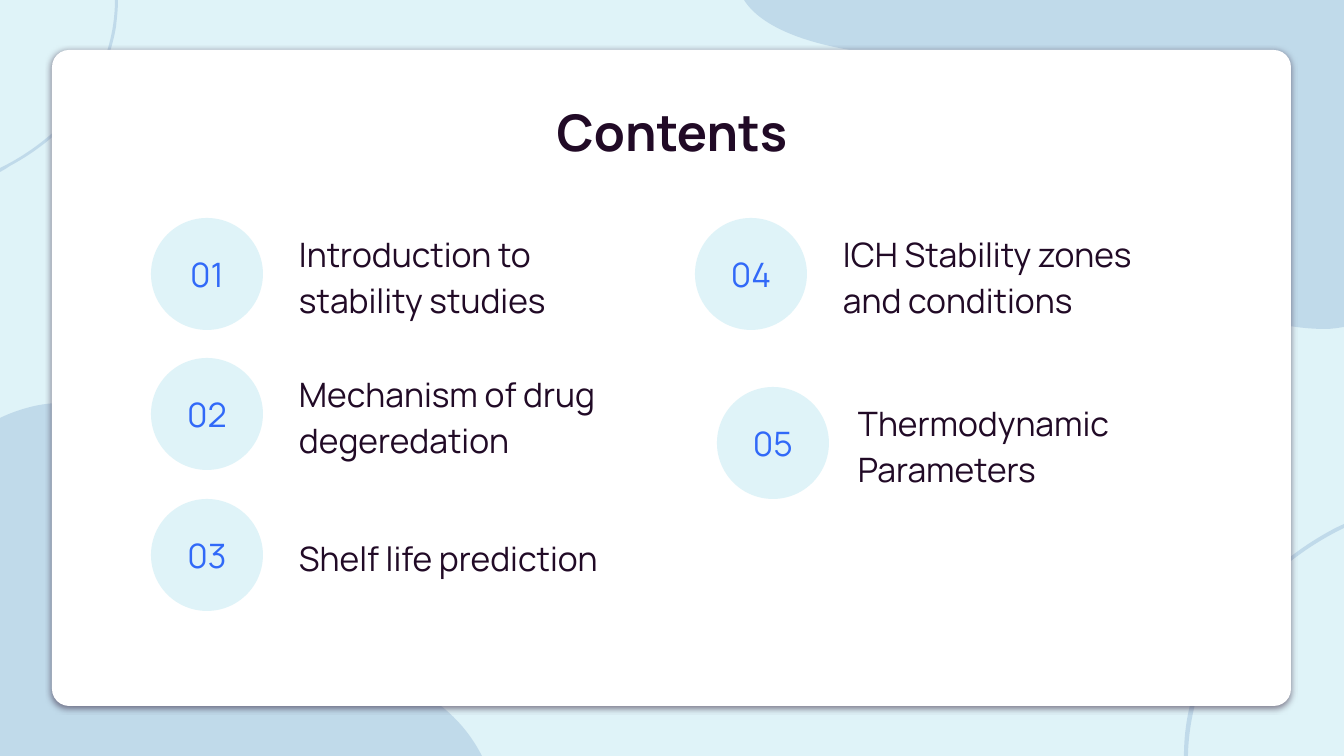
from dataclasses import dataclass

from lxml import etree
from pptx import Presentation
from pptx import util as u
from pptx.dml import color
from pptx.enum import shapes, text
from pptx.oxml import ns

PX = 914400 / 100.8  # EMU in one px
WIDTH, HEIGHT = 1344, 756


@dataclass(frozen=True)
class Theme:
    font: str = "Manrope"
    pale: str = "DFF3F8"
    wave: str = "A0BFDB"
    wave_alpha: int = 48
    card: str = "FFFFFF"
    ink: str = "210A26"
    number: str = "3169F8"
    title_size: int = 36
    item_size: int = 24
    spacing: float = 1.15
    inset: int = 13


def emu(px):
    return u.Emu(round(px * PX))


def rgb(value):
    return color.RGBColor.from_string(value)


def write(shape, content, *, theme, size, ink, bold=False, spacing=None,
          align=text.PP_ALIGN.LEFT, anchor=text.MSO_ANCHOR.MIDDLE):
    frame = shape.text_frame
    frame.word_wrap = True
    frame.auto_size = text.MSO_AUTO_SIZE.NONE
    frame.vertical_anchor = anchor
    frame.margin_left = frame.margin_right = emu(theme.inset)
    frame.margin_top = frame.margin_bottom = emu(theme.inset)
    frame.text = content
    paragraph = frame.paragraphs[0]
    paragraph.alignment = align
    paragraph.space_before = u.Pt(0)
    if spacing:
        paragraph.line_spacing = spacing
    font = paragraph.runs[0].font
    font.name, font.size, font.bold = theme.font, u.Pt(size), bold
    font.color.rgb = rgb(ink)


class Deck:
    def __init__(self, theme):
        self.theme = theme
        self.presentation = Presentation()
        self.presentation.slide_width = emu(WIDTH)
        self.presentation.slide_height = emu(HEIGHT)
        layout = self.presentation.slide_layouts.get_by_name("Title Only")
        self.slide = self.presentation.slides.add_slide(layout)
        background = self.slide.background.fill
        background.solid()
        background.fore_color.rgb = rgb(theme.pale)

    def paint(self, shape, fill):
        shape.shadow.inherit = False
        shape.fill.solid()
        shape.fill.fore_color.rgb = rgb(fill)
        shape.line.fill.background()

    def wave(self, start, segments):
        """Segments hold two numbers for a line and six for a curve."""
        builder = self.slide.shapes.build_freeform(*map(emu, start), scale=1.0)
        ends = [tuple(map(emu, segment[-2:])) for segment in segments]
        builder.add_line_segments(ends, close=True)
        shape = builder.convert_to_shape()
        self.paint(shape, self.theme.wave)
        tint = shape.element.spPr.find(".//" + ns.qn("a:srgbClr"))
        etree.SubElement(tint, ns.qn("a:alpha"), val=str(self.theme.wave_alpha * 1000))
        # Bend the straight segments that have handles
        lines = shape.element.spPr.findall(".//" + ns.qn("a:lnTo"))
        for line, segment in zip(lines, segments):
            if len(segment) == 6:
                curve = etree.Element(ns.qn("a:cubicBezTo"))
                for x, y in zip(segment[::2], segment[1::2]):
                    etree.SubElement(curve, ns.qn("a:pt"), x=str(emu(x) - shape.left),
                                     y=str(emu(y) - shape.top))
                line.getparent().replace(line, curve)

    def card(self, left, top, width, height):
        shape = self.slide.shapes.add_shape(
            shapes.MSO_SHAPE.ROUNDED_RECTANGLE, *map(emu, (left, top, width, height)))
        shape.adjustments[0] = 0.026
        self.paint(shape, self.theme.card)
        effects = shape.element.spPr.find(ns.qn("a:effectLst"))
        shadow = etree.SubElement(
            effects, ns.qn("a:outerShdw"), blurRad=str(u.Pt(4.5)),
            dist=str(u.Pt(1.5)), dir="5400000", algn="bl", rotWithShape="0")
        tint = etree.SubElement(shadow, ns.qn("a:srgbClr"), val=self.theme.ink)
        etree.SubElement(tint, ns.qn("a:alpha"), val="50000")

    def title(self, content, left, top, width, height):
        shape = self.slide.shapes.title
        shape.left, shape.top, shape.width, shape.height = map(
            emu, (left, top, width, height))
        # Bring the title in front of the card
        shape.element.getparent().append(shape.element)
        write(shape, content, theme=self.theme, size=self.theme.title_size,
              ink=self.theme.ink, bold=True, spacing=self.theme.spacing,
              align=text.PP_ALIGN.CENTER, anchor=text.MSO_ANCHOR.TOP)

    def circle(self, content, left, top, size):
        shape = self.slide.shapes.add_shape(
            shapes.MSO_SHAPE.OVAL, *map(emu, (left, top, size, size)))
        self.paint(shape, self.theme.pale)
        write(shape, content, theme=self.theme, size=self.theme.item_size,
              ink=self.theme.number, align=text.PP_ALIGN.CENTER)

    def label(self, content, left, top, width, height):
        shape = self.slide.shapes.add_textbox(*map(emu, (left, top, width, height)))
        write(shape, content, theme=self.theme, size=self.theme.item_size,
              ink=self.theme.ink, spacing=self.theme.spacing)


WAVES = [
    # Thin arc, bottom right
    ((1188, 756), [(1189, 708, 1206, 658, 1235, 619), (1263, 580, 1301, 549, 1344, 528),
                   (1344, 524), (1340, 526, 1335, 528, 1330, 531),
                   (1295, 550, 1263, 577, 1238, 608), (1213, 641, 1194, 679, 1187, 720),
                   (1185, 732, 1184, 744, 1184, 756)]),
    # Blob, bottom left
    ((60, 403), [(29, 403, 0, 418, 0, 418), (0, 756), (482, 756),
                 (420, 634, 230, 657, 150, 633), (72, 610, 158, 493, 116, 430),
                 (101, 409, 81, 403, 60, 403)]),
    # Blob, top right
    ((744, 0), [(766, 35, 839, 58, 957, 58), (961, 58, 966, 58, 970, 58),
                (972, 58, 973, 58, 975, 58),
                (1151, 58, 1078, 215, 1209, 296), (1244, 319, 1289, 329, 1325, 329),
                (1332, 329, 1338, 328, 1344, 327), (1344, 0)]),
    # Thin arc, top left
    ((115, 0), [(115, 36, 103, 73, 82, 102), (60, 130, 31, 153, 0, 168), (0, 172),
                (4, 170, 7, 168, 10, 166), (36, 152, 60, 133, 79, 110),
                (98, 86, 111, 57, 116, 27), (117, 18, 118, 9, 118, 0)]),
]

CIRCLE, LABEL_WIDTH = 112, 364
LEFT, RIGHT, TOP, TWO_ROWS = 151, 695, 218, 281

# Wording, circle left, top, and distance from circle to label
ITEMS = [
    ("Introduction to stability studies", LEFT, TOP, 135),
    ("Mechanism of drug degeredation", LEFT, TOP + TWO_ROWS // 2, 135),
    ("Shelf life prediction", LEFT, TOP + TWO_ROWS, 135),
    ("ICH Stability zones and conditions", RIGHT, TOP, 135),
    ("Thermodynamic Parameters", 717, 387, 128),
]


def main():
    deck = Deck(Theme())
    # Background and card
    for start, segments in WAVES:
        deck.wave(start, segments)
    deck.card(52, 50, 1239, 656)
    # Contents
    deck.title("Contents", 105, 79, 1134, 105)
    for number, (wording, left, top, offset) in enumerate(ITEMS, start=1):
        deck.label(wording, left + offset, top, LABEL_WIDTH, CIRCLE)
        deck.circle(f"{number:02}", left, top, CIRCLE)
    deck.presentation.save("out.pptx")


if __name__ == "__main__":
    main()
